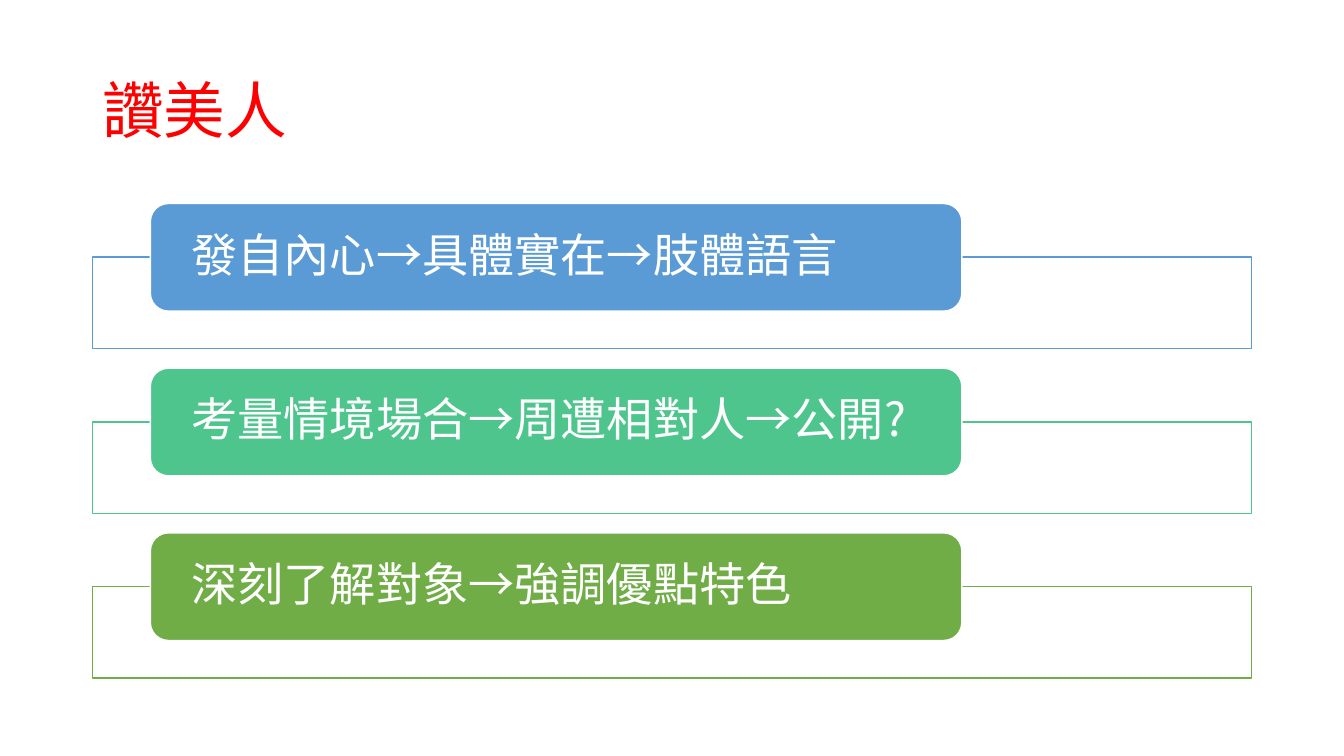
from lxml import etree
from pptx import Presentation
from pptx.dml.color import RGBColor
from pptx.enum import shapes, text
from pptx.oxml import ns
from pptx.util import Cm, Pt

COLORS = {
    "white": "FFFFFF",
    "red": "FF0000",
    "blue": "5B9BD5",
    "mint": "4DC58D",
    "green": "70AD47",
}
FONT = "Noto Sans CJK SC"
POINTS = [
    ("發自內心→具體實在→肢體語言", "blue"),
    ("考量情境場合→周遭相對人→公開?", "mint"),
    ("深刻了解對象→強調優點特色", "green"),
]
LEFT, WIDTH = 2.33, 29.21
FIRST_TOP, PITCH = 5.13, 4.15
FRAME_OFFSET = 1.35


def rgb(name):
    return RGBColor.from_string(COLORS[name])


def write_text(frame, content, *, size, color, left=0.25, right=0.25, vertical=0.13):
    frame.word_wrap = True
    frame.auto_size = text.MSO_AUTO_SIZE.NONE
    frame.vertical_anchor = text.MSO_ANCHOR.MIDDLE
    frame.margin_left, frame.margin_right = Cm(left), Cm(right)
    frame.margin_top = frame.margin_bottom = Cm(vertical)
    paragraph = frame.paragraphs[0]
    paragraph.alignment = text.PP_ALIGN.LEFT
    paragraph.line_spacing = 0.9
    run = paragraph.add_run()
    run.text = content
    run.font.size = Pt(size)
    run.font.color.rgb = rgb(color)
    run.font.name = FONT
    east_asian = etree.SubElement(run.font._element, ns.qn("a:ea"))
    east_asian.set("typeface", FONT)


class SlideBuilder:
    def __init__(self, presentation):
        self.slide = presentation.slides.add_slide(presentation.slide_layouts[5])

    def title(self, content):
        title = self.slide.shapes.title
        title.left, title.top = Cm(LEFT), Cm(1.01)
        title.width, title.height = Cm(WIDTH), Cm(3.68)
        write_text(title.text_frame, content, size=44, color="red")

    def box(self, kind, left, top, width, height, fill, line):
        shape = self.slide.shapes.add_shape(kind, Cm(left), Cm(top), Cm(width), Cm(height))
        shape.shadow.inherit = False
        shape.fill.solid()
        shape.fill.fore_color.rgb = rgb(fill)
        shape.line.color.rgb = rgb(line)
        shape.line.width = Pt(1)
        return shape

    def frame(self, top, color):
        frame = self.box(shapes.MSO_SHAPE.RECTANGLE, LEFT, top, WIDTH, 2.31, "white", color)
        fill_color = frame._element.spPr.find(ns.qn("a:solidFill"))[0]
        etree.SubElement(fill_color, ns.qn("a:alpha")).set("val", "90000")

    def label(self, top, content, color):
        label = self.box(
            shapes.MSO_SHAPE.ROUNDED_RECTANGLE, 3.79, top, 20.45, 2.71, color, "white"
        )
        write_text(
            label.text_frame, content, size=33, color="white", left=0.9, right=0.6, vertical=0
        )


def main():
    presentation = Presentation()
    presentation.slide_width, presentation.slide_height = Cm(33.87), Cm(19.05)
    builder = SlideBuilder(presentation)
    builder.title("讚美人")
    for index, (content, color) in enumerate(POINTS):
        top = FIRST_TOP + index * PITCH
        builder.frame(top + FRAME_OFFSET, color)
        builder.label(top, content, color)
    presentation.save("out.pptx")


if __name__ == "__main__":
    main()
